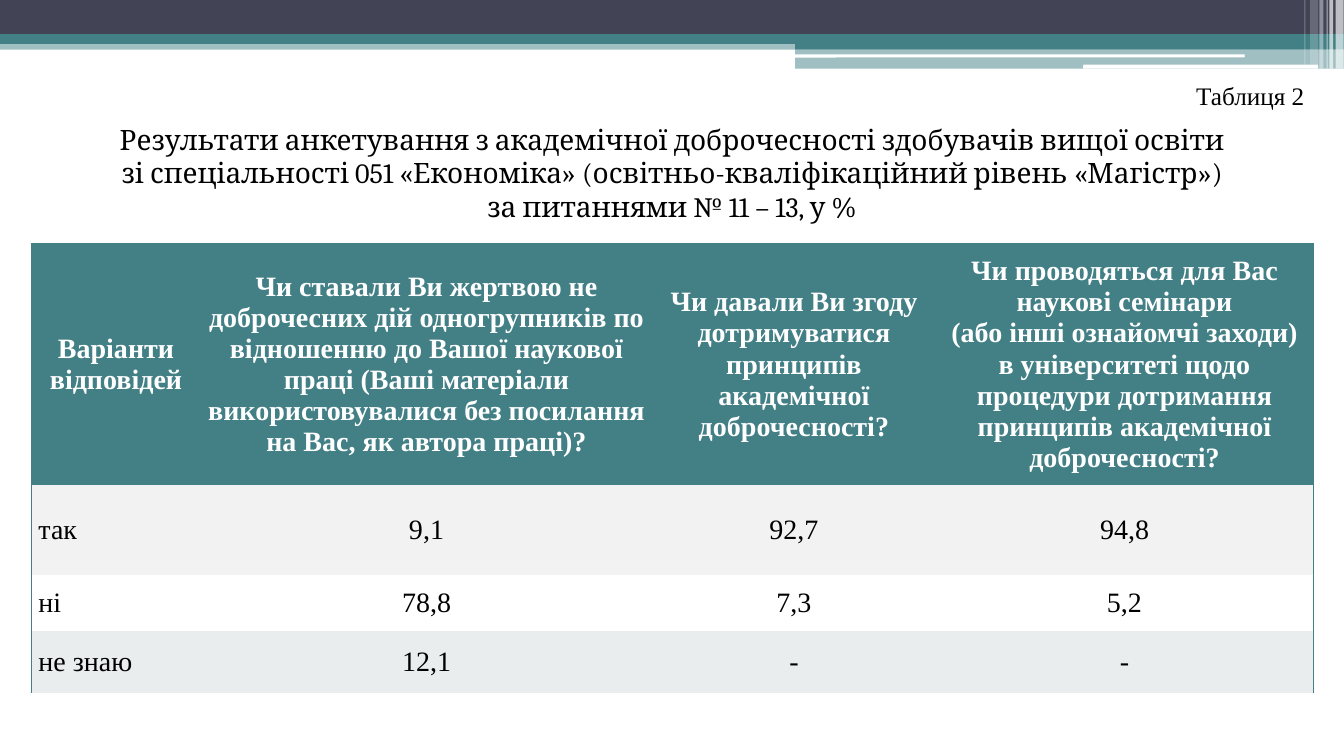
"""Builds the slide with the academic integrity survey table for questions 11 – 13."""
from dataclasses import dataclass

from lxml import etree
from pptx import Presentation
from pptx.dml.color import RGBColor
from pptx.enum.shapes import MSO_SHAPE
from pptx.enum.text import MSO_ANCHOR, MSO_AUTO_SIZE, PP_ALIGN
from pptx.oxml.ns import qn
from pptx.util import Cm, Pt

RECT, ROUNDED = MSO_SHAPE.RECTANGLE, MSO_SHAPE.ROUNDED_RECTANGLE
LEFT, CENTER, RIGHT = PP_ALIGN.LEFT, PP_ALIGN.CENTER, PP_ALIGN.RIGHT
TOP, MIDDLE = MSO_ANCHOR.TOP, MSO_ANCHOR.MIDDLE
NO_AUTOFIT = MSO_AUTO_SIZE.NONE
TITLE_ONLY = 5


@dataclass(frozen=True)
class Theme:
    navy: str = "424456"
    teal: str = "438086"
    white: str = "FFFFFF"
    black: str = "000000"
    row_fills: tuple[str, ...] = ("438086", "F2F2F2", "FFFFFF", "E9EDED")
    heading_font: str = "Cambria"
    table_font: str = "Times New Roman"
    main_size: int = 20
    label_size: int = 18
    border_width: int = 1


@dataclass(frozen=True)
class Band:
    left: float
    top: float
    width: float
    height: float
    color: str
    opacity: int = 100
    outline: int = RECT


THEME = Theme()
SLIDE_WIDTH, SLIDE_HEIGHT = 33.87, 19.05

BANDS = (
    Band(0, 1.02, SLIDE_WIDTH, 0.23, THEME.teal, 50),
    Band(0, 0, SLIDE_WIDTH, 0.86, THEME.navy),
    Band(0, 0.86, SLIDE_WIDTH, 0.25, THEME.teal),
    Band(20.04, 0.99, 13.83, 0.25, THEME.teal),
    Band(20.04, 1.22, 13.83, 0.51, THEME.teal, 50),
    Band(20.02, 1.37, 11.35, 0.08, THEME.white, outline=ROUNDED),
    Band(27.3, 1.63, 5.92, 0.1, THEME.white, outline=ROUNDED),
    Band(33.66, 0, 0.2, 1.73, THEME.white, 65),
    Band(33.5, 0, 0.1, 1.73, THEME.white, 65),
    Band(33.43, 0, 0.03, 1.73, THEME.white, 60),
    Band(33.25, 0, 0.1, 1.73, THEME.white, 40),
    Band(33.02, 0, 0.2, 1.63, THEME.white, 20),
    Band(32.87, 0, 0.03, 1.63, THEME.white, 30),
)

HEADING = (
    "Результати анкетування з академічної доброчесності здобувачів вищої освіти\n"
    "зі спеціальності 051 «Економіка» (освітньо-кваліфікаційний рівень «Магістр»)\n"
    "за питаннями № 11 – 13, у %"
)
TABLE_LABEL = "Таблиця 2"
ANSWERS = (
    (
        "Варіанти відповідей",
        "Чи ставали Ви жертвою не доброчесних дій одногрупників по відношенню до "
        "Вашої наукової праці (Ваші матеріали використовувалися без посилання на "
        "Вас, як автора праці)?",
        "Чи давали Ви згоду дотримуватися принципів академічної доброчесності?",
        "Чи проводяться для Вас наукові семінари\n"
        "(або інші ознайомчі заходи) в університеті щодо процедури дотримання "
        "принципів академічної доброчесності?",
    ),
    ("так", "9,1", "92,7", "94,8"),
    ("ні", "78,8", "7,3", "5,2"),
    ("не знаю", "12,1", "-", "-"),
)
COLUMN_WIDTHS = (4.27, 11.38, 7.14, 9.52)
ROW_HEIGHTS = (6.07, 2.26, 1.42, 1.57)
CELL_FORMAT = {
    "vertical_anchor": MIDDLE,
    "margin_left": Cm(0.18),
    "margin_right": Cm(0.18),
    "margin_top": 0,
    "margin_bottom": 0,
}


def apply_format(target, values: dict) -> None:
    for attribute, value in values.items():
        setattr(target, attribute, value)


def style_text(frame, align: int, color: str, font: str, size: int, bold: bool = False) -> None:
    for paragraph in frame.paragraphs:
        paragraph.alignment = align
        apply_format(paragraph.font, {"name": font, "size": Pt(size), "bold": bold})
        paragraph.font.color.rgb = RGBColor.from_string(color)


def draw_band(slide, band: Band) -> None:
    bounds = (Cm(v) for v in (band.left, band.top, band.width, band.height))
    strip = slide.shapes.add_shape(band.outline, *bounds)
    strip.shadow.inherit = False
    strip.line.fill.background()
    strip.fill.solid()
    strip.fill.fore_color.rgb = RGBColor.from_string(band.color)
    if band.opacity < 100:
        color = next(strip.fill._xPr.iter(qn("a:srgbClr")))
        etree.SubElement(color, qn("a:alpha"), val=str(band.opacity * 1000))


def set_borders(cell, drawn: dict[str, bool]) -> None:
    properties = cell._tc.get_or_add_tcPr()
    for side, visible in drawn.items():
        border = etree.SubElement(properties, qn(f"a:{side}"), w=str(Pt(THEME.border_width)))
        if visible:
            fill = etree.SubElement(border, qn("a:solidFill"))
            etree.SubElement(fill, qn("a:srgbClr"), val=THEME.teal)
        else:
            etree.SubElement(border, qn("a:noFill"))


def draw_table(slide) -> None:
    bounds = (Cm(v) for v in (0.79, 6.15, sum(COLUMN_WIDTHS), sum(ROW_HEIGHTS)))
    table = slide.shapes.add_table(len(ANSWERS), len(COLUMN_WIDTHS), *bounds).table
    table.horz_banding = False
    for column, width in zip(table.columns, COLUMN_WIDTHS):
        column.width = Cm(width)
    for r, (answers, height) in enumerate(zip(ANSWERS, ROW_HEIGHTS)):
        table.rows[r].height = Cm(height)
        header = r == 0
        for c, answer in enumerate(answers):
            cell = table.cell(r, c)
            cell.text = answer
            apply_format(cell, CELL_FORMAT)
            last = c == len(answers) - 1
            set_borders(cell, {"lnL": c == 0, "lnR": last, "lnT": header, "lnB": False})
            cell.fill.solid()
            cell.fill.fore_color.rgb = RGBColor.from_string(THEME.row_fills[r])
            align = CENTER if header or c else LEFT
            color = THEME.white if header else THEME.black
            style_text(cell.text_frame, align, color, THEME.table_font, THEME.main_size, header)


def write_heading(slide) -> None:
    heading = slide.shapes.title
    apply_format(heading, {"left": Cm(0.63), "top": Cm(2.95), "width": Cm(32.61), "height": Cm(2.82)})
    frame = heading.text_frame
    frame.text = HEADING
    apply_format(frame, {"auto_size": NO_AUTOFIT, "vertical_anchor": TOP, "word_wrap": True})
    style_text(frame, CENTER, THEME.black, THEME.heading_font, THEME.main_size)


def write_table_label(slide) -> None:
    frame = slide.shapes.add_textbox(Cm(29.7), Cm(1.9), Cm(3.42), Cm(1.02)).text_frame
    frame.text = TABLE_LABEL
    frame.word_wrap = False
    style_text(frame, RIGHT, THEME.black, THEME.table_font, THEME.label_size)


def main() -> None:
    deck = Presentation()
    apply_format(deck, {"slide_width": Cm(SLIDE_WIDTH), "slide_height": Cm(SLIDE_HEIGHT)})
    slide = deck.slides.add_slide(deck.slide_layouts[TITLE_ONLY])
    for band in BANDS:
        draw_band(slide, band)
    draw_table(slide)
    write_heading(slide)
    write_table_label(slide)
    deck.save("out.pptx")


if __name__ == "__main__":
    main()
